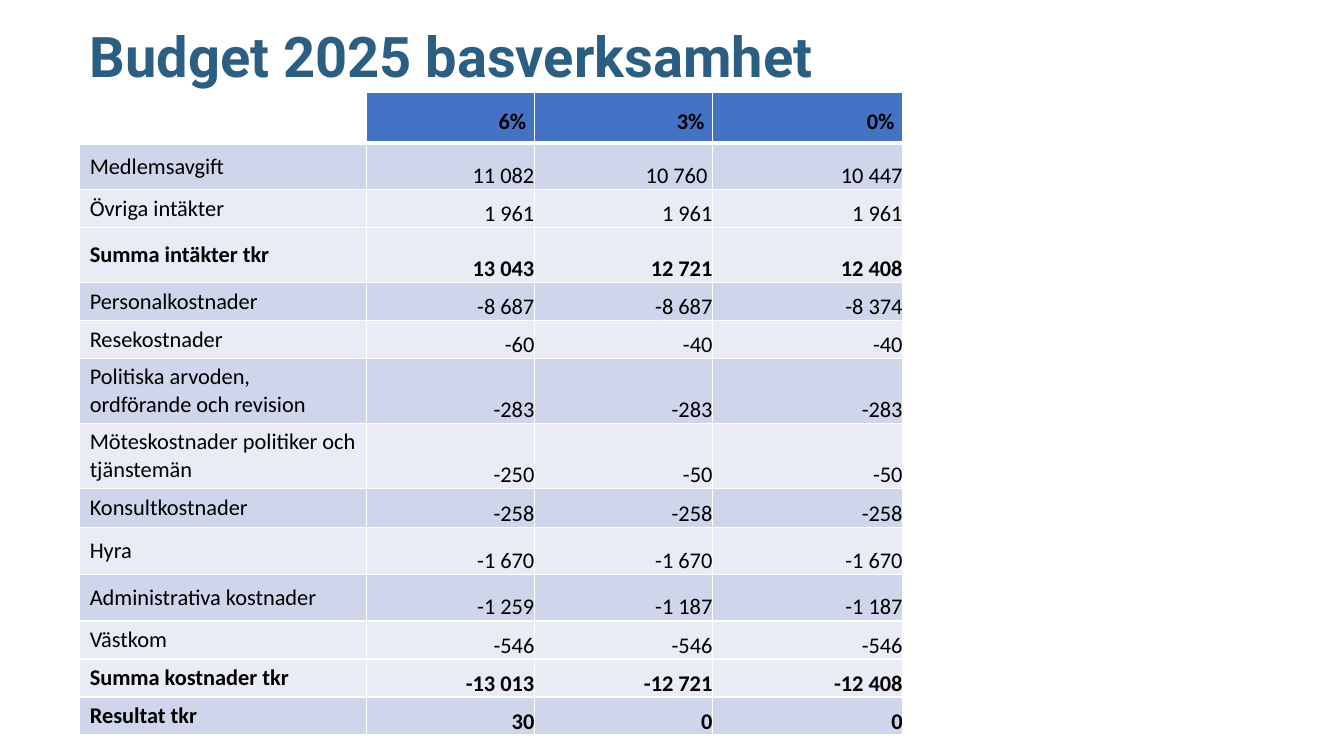
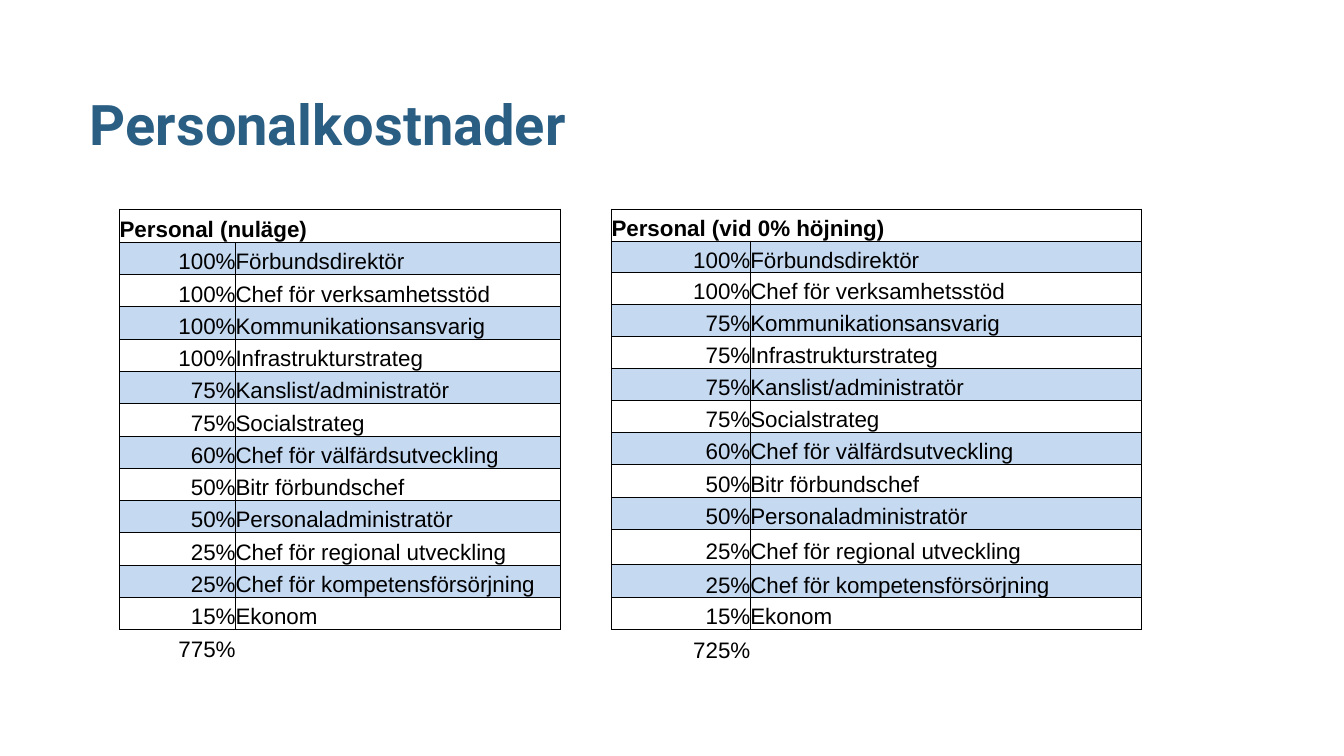
from lxml import etree
from pptx import Presentation
from pptx.dml.color import RGBColor
from pptx.enum.text import MSO_ANCHOR, MSO_AUTO_SIZE, PP_ALIGN
from pptx.oxml.ns import qn
from pptx.util import Inches, Pt

LEFT, RIGHT = PP_ALIGN.LEFT, PP_ALIGN.RIGHT
TOP, MIDDLE, BOTTOM = MSO_ANCHOR.TOP, MSO_ANCHOR.MIDDLE, MSO_ANCHOR.BOTTOM
NO_AUTOFIT = MSO_AUTO_SIZE.NONE
TITLE_ONLY = 5

NAVY, BLACK, WHITE = "2B5E83", "000000", "FFFFFF"
HEADER_BLUE, BAND_DARK, BAND_LIGHT, SKY = "4472C4", "CFD5EA", "E9EBF5", "C5D9F1"
NO_INSET, HEADER_INSET, LABEL_INSET = (0, 0), (0.08, 0.08), (0.1, 0.05)

SINGLE, ROOMY, DOUBLE = 5.03, 6.2, 8.6
BUDGET = [
    ("Medlemsavgift", ("11 082", "10 760 ", "10 447"), 6.13, BAND_DARK, False),
    ("Övriga intäkter", ("1 961", "1 961", "1 961"), SINGLE, BAND_LIGHT, False),
    ("Summa intäkter tkr", ("13 043", "12 721", "12 408"), 7.27, BAND_LIGHT, True),
    ("Personalkostnader", ("-8 687", "-8 687", "-8 374"), SINGLE, BAND_DARK, False),
    ("Resekostnader", ("-60", "-40", "-40"), SINGLE, BAND_LIGHT, False),
    ("Politiska arvoden, ordförande och revision", ("-283", "-283", "-283"), DOUBLE, BAND_DARK, False),
    ("Möteskostnader politiker och tjänstemän", ("-250", "-50", "-50"), DOUBLE, BAND_LIGHT, False),
    ("Konsultkostnader", ("-258", "-258", "-258"), 5.13, BAND_DARK, False),
    ("Hyra", ("-1 670", "-1 670", "-1 670"), ROOMY, BAND_LIGHT, False),
    ("Administrativa kostnader", ("-1 259", "-1 187", "-1 187"), ROOMY, BAND_DARK, False),
    ("Västkom", ("-546", "-546", "-546"), SINGLE, BAND_LIGHT, False),
    ("Summa kostnader tkr", ("-13 013", "-12 721", "-12 408"), SINGLE, BAND_LIGHT, True),
    ("Resultat tkr", ("30", "0", "0"), SINGLE, BAND_DARK, True),
]

STAFF = [
    ("Förbundsdirektör", 100, 100),
    ("Chef för verksamhetsstöd", 100, 100),
    ("Kommunikationsansvarig", 100, 75),
    ("Infrastrukturstrateg", 100, 75),
    ("Kanslist/administratör", 75, 75),
    ("Socialstrateg", 75, 75),
    ("Chef för välfärdsutveckling", 60, 60),
    ("Bitr förbundschef", 50, 50),
    ("Personaladministratör", 50, 50),
    ("Chef för regional utveckling", 25, 25),
    ("Chef för kompetensförsörjning", 25, 25),
    ("Ekonom", 15, 15),
]


def color(value):
    """Turn a hex string into a colour."""
    return RGBColor.from_string(value)


class Deck:
    """Hold the style and current slide; lengths are percentages of the slide."""

    def __init__(self):
        """Start a widescreen presentation."""
        self.prs = Presentation()
        self.prs.slide_width, self.prs.slide_height = Inches(13.33), Inches(7.5)
        self.slide = None

    def across(self, share):
        """Convert a percentage of the slide width."""
        return int(self.prs.slide_width * share / 100)

    def down(self, share):
        """Convert a percentage of the slide height."""
        return int(self.prs.slide_height * share / 100)

    def place(self, box):
        """Convert left, top, width and height."""
        left, top, width, height = box
        return self.across(left), self.down(top), self.across(width), self.down(height)

    def style(self, paragraph, font, size, ink, bold, align):
        """Format a paragraph and its runs."""
        paragraph.alignment = align
        for target in [paragraph, *paragraph.runs]:
            target.font.name, target.font.size, target.font.bold = font, Pt(size), bold
            target.font.color.rgb = color(ink)

    def add_slide(self, heading, box):
        """Add a slide with its heading."""
        self.slide = self.prs.slides.add_slide(self.prs.slide_layouts[TITLE_ONLY])
        title = self.slide.shapes.title
        title.left, title.top, title.width, title.height = self.place(box)
        frame = title.text_frame
        frame.text = heading
        frame.word_wrap, frame.auto_size, frame.vertical_anchor = True, NO_AUTOFIT, TOP
        frame.paragraphs[0].line_spacing = 0.9
        self.style(frame.paragraphs[0], "Roboto", 40, NAVY, True, LEFT)

    def table(self, left, top, columns, rows):
        """Add an unbanded table with given column widths and row heights."""
        box = self.place((left, top, sum(columns), sum(rows)))
        table = self.slide.shapes.add_table(len(rows), len(columns), *box).table
        table.first_row = table.horz_banding = False
        for column, width in zip(table.columns, columns):
            column.width = self.across(width)
        for row, height in zip(table.rows, rows):
            row.height = self.down(height)
        return table

    def borders(self, cell, ink, widths):
        """Draw left, right, top and bottom borders, none where the width is 0."""
        properties = cell._tc.get_or_add_tcPr()
        for side, width in zip("LRTB", widths):
            line = etree.SubElement(properties, qn(f"a:ln{side}"), w=str(Pt(width)))
            if width:
                fill = etree.SubElement(line, qn("a:solidFill"))
                etree.SubElement(fill, qn("a:srgbClr"), val=ink)
            else:
                etree.SubElement(line, qn("a:noFill"))

    def cell(self, cell, text, font, border, fill=None, bold=False,
             align=LEFT, anchor=BOTTOM, inset=NO_INSET):
        """Fill in and format one table cell."""
        cell.text = text
        self.style(cell.text_frame.paragraphs[0], font, 16, BLACK, bold, align)
        cell.vertical_anchor = anchor
        cell.margin_left = cell.margin_right = Inches(inset[0])
        cell.margin_top = cell.margin_bottom = Inches(inset[1])
        self.borders(cell, *border)
        if fill:
            cell.fill.solid()
            cell.fill.fore_color.rgb = color(fill)
        else:
            cell.fill.background()

    def budget_table(self, left, top, columns, headings):
        """Add the budget with one column per fee increase."""
        heights = [6.75] + [height for _, _, height, _, _ in BUDGET]
        table = self.table(left, top, columns, heights)
        for c, heading in enumerate(headings):
            self.cell(table.cell(0, c), heading, "Calibri", (WHITE, (1, 1, 1, 3)),
                      HEADER_BLUE if heading else None, True, RIGHT, inset=HEADER_INSET)
        for r, (label, amounts, _, band, bold) in enumerate(BUDGET, 1):
            border = (WHITE, (1, 1, 3 if r == 1 else 1, 1))
            self.cell(table.cell(r, 0), label, "Calibri", border, band, bold,
                      anchor=MIDDLE, inset=LABEL_INSET)
            for c, amount in enumerate(amounts, 1):
                self.cell(table.cell(r, c), amount, "Calibri", border, band, bold, RIGHT)

    def staff_table(self, left, top, columns, rows, heading, shares):
        """Add a list of posts with their shares and the total."""
        table = self.table(left, top, columns, rows)
        grid, total_border = (BLACK, (0.5,) * 4), (BLACK, (0, 0, 0.5, 0))
        table.cell(0, 0).merge(table.cell(0, 1))
        for c, text in enumerate((heading, "")):
            self.cell(table.cell(0, c), text, "Arial", grid, bold=True)
        posts = [(f"{share}%", role) for share, (role, _, _) in zip(shares, STAFF)]
        for r, (share, role) in enumerate(posts + [(f"{sum(shares)}%", "")], 1):
            border = grid if role else total_border
            band = SKY if role and r % 2 else None
            self.cell(table.cell(r, 0), share, "Arial", border, band, align=RIGHT)
            self.cell(table.cell(r, 1), role, "Arial", border, band)


def main():
    """Build and save the two slides."""
    deck = Deck()
    deck.add_slide("Budget 2025 basverksamhet", (5.93, 3.2, 85.37, 10.93))
    deck.budget_table(5.93, 12.2, (21.33, 12.5, 13.25, 14.15), ("", "6%", "3%", "0%"))

    deck.add_slide("Personalkostnader", (5.93, 12.13, 54.09, 17.73))
    deck.staff_table(8.9, 27.65, (8.63, 24.13), [4.4] + [4.27] * 12 + [4.4],
                     "Personal (nuläge)", [now for _, now, _ in STAFF])
    deck.staff_table(45.5, 27.65, (10.33, 29.1), [4.22] * 8 + [4.4, 4.2, 4.7, 4.4, 4.2, 4.4],
                     "Personal (vid 0% höjning)", [unraised for _, _, unraised in STAFF])
    deck.prs.save("out.pptx")


if __name__ == "__main__":
    main()
